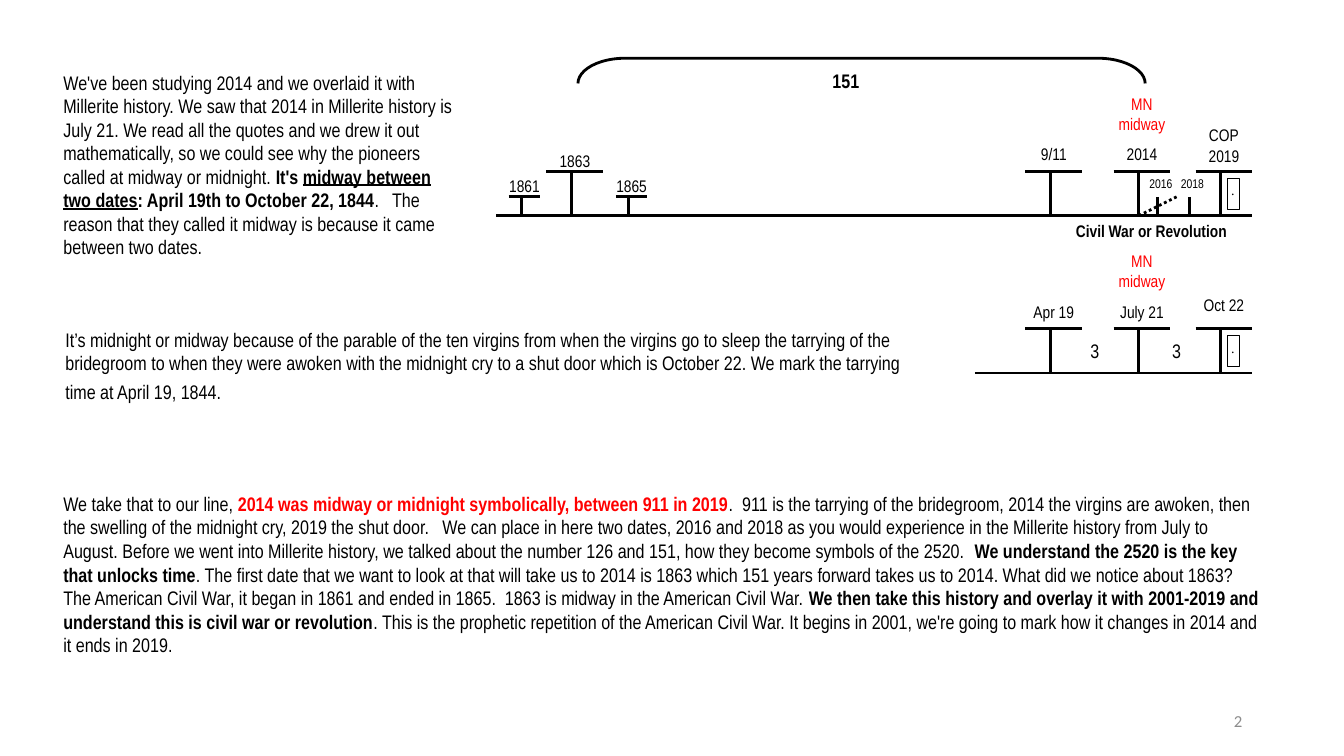
from dataclasses import dataclass
from lxml.etree import SubElement
from pptx import Presentation
from pptx.dml.color import RGBColor
from pptx.enum.dml import MSO_LINE
from pptx.enum.shapes import MSO_CONNECTOR, MSO_SHAPE
from pptx.enum.text import MSO_ANCHOR, PP_ALIGN
from pptx.oxml.ns import qn
from pptx.util import Inches, Pt


@dataclass(frozen=True)
class Theme:
    font: str = "Arial Narrow"
    number_font: str = "Calibri"
    door_font: str = "Times New Roman"
    ink: str = "000000"
    accent: str = "FF0000"
    muted: str = "8C8C8C"
    body: int = 14
    label: int = 12
    small: int = 9
    door: int = 10
    tail: int = 18
    rule: float = 2
    hairline: float = 0.25


THEME = Theme()
BOLD = {"bold": True}

# Content: passages as (left, top, width, height in inches, spans)
PASSAGES = [
    (0.53, 0.65, 4.09, 1.99, [
        ("We've been studying 2014 and we overlaid it with Millerite history. We saw that 2014 in "
         "Millerite history is July 21. We read all the quotes and we drew it out mathematically, "
         "so we could see why the pioneers called at midway or midnight. ", {}),
        ("It's ", BOLD),
        ("midway between two dates", {"bold": True, "underline": True}),
        (": April 19th to October 22, 1844", BOLD),
        (".   The reason that they called it midway is because it came between two dates.", {}),
    ]),
    (0.55, 3.2, 8.59, 0.87, [
        ("It’s midnight or midway because of the parable of the ten virgins from when the virgins "
         "go to sleep the tarrying of the bridegroom to when they were awoken with the midnight cry "
         "to a shut door which is October 22. We mark the tarrying time at April 19, 1844.", {}),
        (" ", {"size": THEME.tail, "font": THEME.number_font}),
    ]),
    (0.53, 4.83, 12.06, 1.75, [
        ("We take that to our line, ", {}),
        ("2014 was midway or midnight symbolically, between 911 in 2019",
         {"bold": True, "color": THEME.accent}),
        (".  911 is the tarrying of the bridegroom, 2014 the virgins are awoken, then the swelling "
         "of the midnight cry, 2019 the shut door.   We can place in here two dates, 2016 and 2018 "
         "as you would experience in the Millerite history from July to August. Before we went into "
         "Millerite history, we talked about the number 126 and 151, how they become symbols of "
         "the 2520.  ", {}),
        ("We understand the 2520 is the key that unlocks time", BOLD),
        (". The first date that we want to look at that will take us to 2014 is 1863 which 151 "
         "years forward takes us to 2014. What did we notice about 1863?  The American Civil War, "
         "it began in 1861 and ended in 1865.  1863 is midway in the American Civil War. ", {}),
        ("We then take this history and overlay it with 2001-2019 and understand this is civil war "
         "or revolution", BOLD),
        (". This is the prophetic repetition of the American Civil War. It begins in 2001, we're "
         "going to mark how it changes in 2014 and it ends in 2019.", {}),
    ]),
]

# Timelines on a 1/16 inch grid; rows count upward from each baseline
UNIT, ORIGIN, END_COLUMN = 1 / 16, 4.92, 120
TALL, SHORT = 7, 3
TIMELINES = [  # baseline, first column, dates as (column, rows, label, label rows)
    (2.14, 0, [(4, SHORT, "1861", 4), (12, TALL, "1863", 4), (21, SHORT, "1865", 4),
               (88, TALL, "9/11", 5), (102, TALL, "2014", 5), (115, TALL, "COP\n2019", 8)]),
    (3.7, 76, [(88, TALL, "Apr 19", 5), (102, TALL, "July 21", 5), (115, TALL, "Oct 22", 6)]),
]
CAPS = {TALL: (-4, 5), SHORT: (-2, 3)}
MINOR_DATES = [(105, "2016"), (110, "2018")]
GAPS = [(92, "3"), (105, "3")]

deck = Presentation()
deck.slide_width, deck.slide_height = Inches(13.33), Inches(7.5)
page = deck.slides.add_slide(deck.slide_layouts[6])


def write(frame, spans, align=PP_ALIGN.LEFT, inset=None, anchor=MSO_ANCHOR.TOP, size=THEME.label,
          color=THEME.ink, font=THEME.font, bold=False):
    """Fill a text frame; a line break in a span starts a new paragraph."""
    frame.word_wrap, frame.vertical_anchor = True, anchor
    if inset is not None:
        frame.margin_left = frame.margin_right = Inches(inset)
        frame.margin_top = frame.margin_bottom = Inches(inset)
    para = frame.paragraphs[0]
    para.alignment = align
    for text, style in spans:
        for index, line in enumerate(text.split("\n")):
            if index:
                para = frame.add_paragraph()
                para.alignment = align
            span = para.add_run()
            span.text = line
            span.font.name = style.get("font", font)
            span.font.size = Pt(style.get("size", size))
            span.font.bold = style.get("bold", bold)
            span.font.underline = style.get("underline", False)
            span.font.color.rgb = RGBColor.from_string(style.get("color", color))


def text_box(left, top, width, height, spans, **style):
    box = page.shapes.add_textbox(Inches(left), Inches(top), Inches(width), Inches(height))
    write(box.text_frame, spans, **style)


def across(column):
    return ORIGIN + column * UNIT


def label(text, column, rows_up, columns, rows, baseline, **style):
    """Place a centred label whose top is rows_up above the baseline."""
    text_box(across(column), baseline - rows_up * UNIT, columns * UNIT, rows * UNIT,
             [(text, {})], **{"align": PP_ALIGN.CENTER, "inset": 0.04, **style})


def rule(start, end, baseline, dash=None):
    """Draw a line between two (column, rows up) points."""
    points = [Inches(value) for column, row in (start, end)
              for value in (across(column), baseline - row * UNIT)]
    line = page.shapes.add_connector(MSO_CONNECTOR.STRAIGHT, *points)
    line.line.color.rgb = RGBColor.from_string(THEME.ink)
    line.line.width = Pt(THEME.rule)
    if dash:
        line.line.dash_style = dash
    SubElement(line._element.spPr, qn("a:effectLst"))


def outline(kind, left, top, width, height, weight):
    shape = page.shapes.add_shape(kind, Inches(left), Inches(top), Inches(width), Inches(height))
    shape.shadow.inherit = False
    shape.fill.background()
    shape.line.color.rgb = RGBColor.from_string(THEME.ink)
    shape.line.width = Pt(weight)
    return shape


# Both timelines: baseline, dates, midway mark and shut door
for baseline, first_column, dates in TIMELINES:
    rule((first_column, 0), (END_COLUMN, 0), baseline)
    for column, rows, text, label_rows in dates:
        cap_left, cap_right = CAPS[rows]
        rule((column, rows), (column, 0), baseline)
        rule((column + cap_left, rows), (column + cap_right, rows), baseline)
        label(text, column - 4, rows + label_rows, 9, label_rows, baseline)
    label("MN\nmidway", 97, 20, 11, 8, baseline, color=THEME.accent)
    door = outline(MSO_SHAPE.RECTANGLE, across(116), baseline - 6 * UNIT, 2 * UNIT, 5 * UNIT,
                   THEME.hairline)
    write(door.text_frame, [(".", {})], inset=0.04, size=THEME.door, font=THEME.door_font)

# Upper timeline: minor dates, dotted rise, 151-year bracket
upper, lower = (timeline[0] for timeline in TIMELINES)
for column, text in MINOR_DATES:
    rule((column, SHORT), (column, 0), upper)
    label(text, column - 2, TALL, 5, 4, upper, size=THEME.small)
rule((102, 0), (108, SHORT), upper, dash=MSO_LINE.ROUND_DOT)

depth, span_length = 4 * UNIT, 90 * UNIT
bracket_middle = across(13) + span_length / 2
bracket_center = upper - 23 * UNIT
bracket = outline(MSO_SHAPE.LEFT_BRACKET, bracket_middle - depth / 2,
                  bracket_center - span_length / 2, depth, span_length, THEME.rule)
bracket.rotation = 90
bracket.adjustments[0] = 1.875
label("151", 51, 24, 9, 6, upper, size=THEME.body, bold=True)
label("Civil War or Revolution", 88, 0, 32, 5, upper, bold=True, inset=0.05)

# Lower timeline: the equal gaps
for column, text in GAPS:
    label(text, column, 6, 6, 5, lower, size=THEME.body)

# Passages and page number
for left, top, width, height, spans in PASSAGES:
    text_box(left, top, width, height, spans, size=THEME.body)
text_box(9.42, 6.95, 3, 0.4, [("2", {})], align=PP_ALIGN.RIGHT, anchor=MSO_ANCHOR.MIDDLE,
         color=THEME.muted, font=THEME.number_font)

deck.save("out.pptx")
